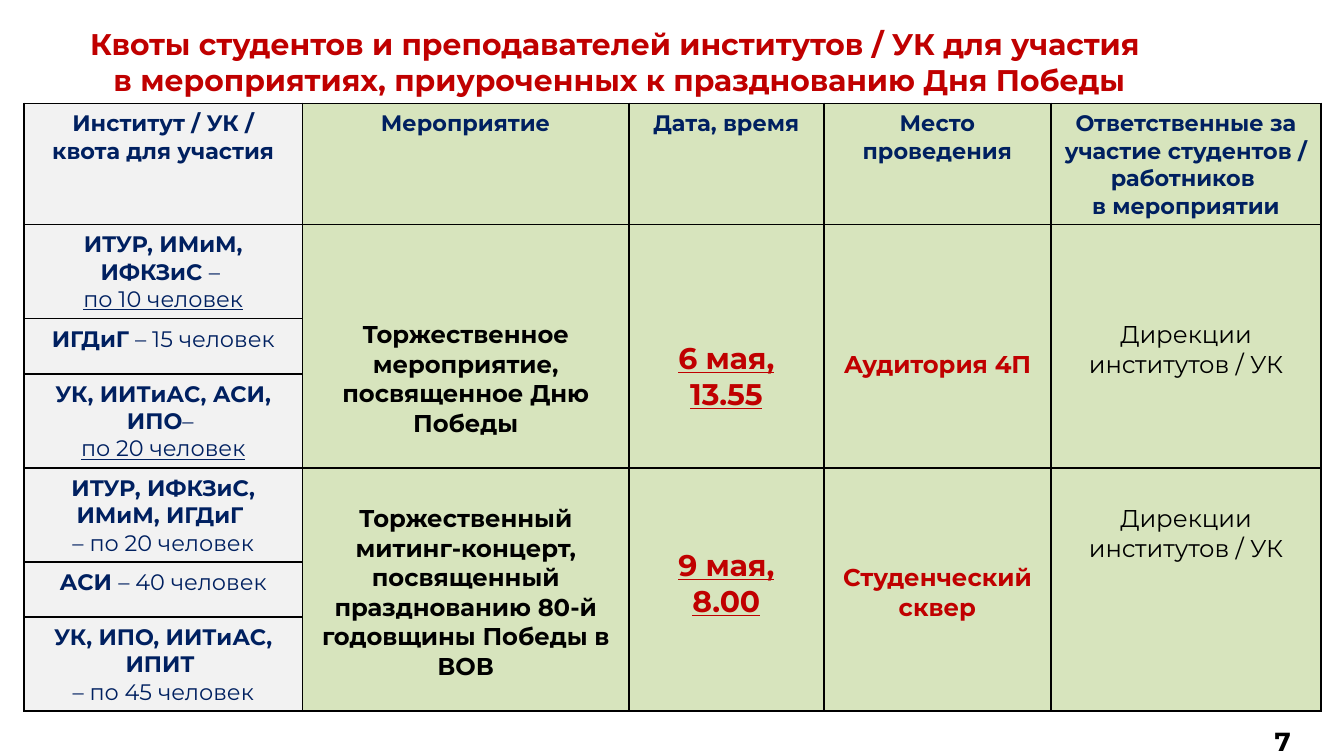
import pptx
import pptx.dml.color
import pptx.enum.text
import pptx.oxml
import pptx.oxml.ns
import pptx.util
from pptx.util import Inches

COLORS = {
    "red": "C00000",
    "navy": "002060",
    "black": "000000",
    "gray": "F2F2F2",
    "green": "D7E4BD",
}
LINE_HEIGHT = 1.22  # Montserrat line height relative to the text size


class SlideBuilder:
    font = "Montserrat"
    border_width = 1

    def __init__(self, presentation):
        self.slide = presentation.slides.add_slide(presentation.slide_layouts[6])

    def fill_text(self, text_frame, paragraphs, size, color):
        """Each paragraph is a list of (text, style); style holds b and u."""
        for index, runs in enumerate(paragraphs):
            paragraph = text_frame.paragraphs[0] if index == 0 else text_frame.add_paragraph()
            paragraph.alignment = pptx.enum.text.PP_ALIGN.CENTER
            for text, style in runs:
                run = paragraph.add_run()
                run.text = text
                run.font.name = self.font
                run.font.size = pptx.util.Pt(size)
                run.font.bold = "b" in style
                run.font.underline = "u" in style
                run.font.color.rgb = pptx.dml.color.RGBColor.from_string(COLORS[color])

    def text_box(self, left, top, width, height, paragraphs, size, color):
        shape = self.slide.shapes.add_textbox(
            Inches(left), Inches(top), Inches(width), Inches(height))
        shape.text_frame.word_wrap = True
        self.fill_text(shape.text_frame, paragraphs, size, color)

    def table(self, left, top, columns, rows):
        shape = self.slide.shapes.add_table(
            len(rows), len(columns), Inches(left), Inches(top),
            Inches(sum(columns)), Inches(sum(rows)))
        table = shape.table
        table.first_row = table.horz_banding = False
        for column, width in zip(table.columns, columns):
            column.width = Inches(width)
        for row, height in zip(table.rows, rows):
            row.height = Inches(height)
            for index, cell in enumerate(row.cells):
                self.cell_style(cell, "gray" if index == 0 else "green")
        return table

    def cell_style(self, cell, fill):
        properties = cell._tc.get_or_add_tcPr()
        for side in ("lnL", "lnR", "lnT", "lnB"):
            properties.append(pptx.oxml.parse_xml(
                f'<a:{side} {pptx.oxml.ns.nsdecls("a")} '
                f'w="{pptx.util.Pt(self.border_width)}"><a:solidFill>'
                f'<a:srgbClr val="{COLORS["black"]}"/></a:solidFill></a:{side}>'))
        cell.fill.solid()
        cell.fill.fore_color.rgb = pptx.dml.color.RGBColor.from_string(COLORS[fill])

    def cell_text(self, cell, paragraphs, size, color, lines_above=0):
        cell.margin_top = Inches(0.05) + pptx.util.Pt(lines_above * size * LINE_HEIGHT)
        self.fill_text(cell.text_frame, paragraphs, size, color)


HEADERS = [
    ["Институт / УК / квота для участия"],
    ["Мероприятие"],
    ["Дата, время"],
    ["Место проведения"],
    ["Ответственные за участие студентов / работников ", "в мероприятии"],
]
QUOTAS = [
    [[("ИТУР, ИМиМ, ИФКЗиС ", "b"), ("– ", "")], [("по 10 человек", "u")]],
    [[("ИГДиГ", "b"), (" – 15 человек", "")]],
    [[("УК, ИИТиАС, АСИ, ИПО", "b"), ("– ", "")], [("по 20 человек", "u")]],
    [[("ИТУР, ИФКЗиС, ИМиМ, ИГДиГ ", "b")], [("– по 20 человек", "")]],
    [[("АСИ ", "b"), ("– 40 человек", "")]],
    [[("УК, ИПО, ИИТиАС, ИПИТ ", "b")], [("– по 45 человек", "")]],
]
# Size, color and style of the event columns
EVENT_STYLES = [(13, "black", "b"), (16, "red", "bu"), (13, "red", "b"), (13, "black", "")]
# Text and number of lines left free above it
EVENTS = [
    [("Торжественное мероприятие, посвященное Дню Победы", 3),
     ("6 мая, 13.55", 3),
     ("Аудитория 4П", 4),
     ("Дирекции институтов / УК", 3)],
    [("Торжественный митинг-концерт, посвященный празднованию 80-й годовщины Победы в ВОВ", 1),
     ("9 мая, 8.00", 2),
     ("Студенческий сквер", 3),
     ("Дирекции институтов / УК", 1)],
]
ROWS_PER_EVENT = 3


def main():
    presentation = pptx.Presentation()
    presentation.slide_width = Inches(10)
    presentation.slide_height = Inches(10 * 9 / 16)
    builder = SlideBuilder(presentation)

    # Title and page number
    builder.text_box(0.12, 0.14, 8.98, 0.64, [
        [("Квоты студентов и преподавателей институтов / УК для участия ", "b")],
        [("в мероприятиях, приуроченных к празднованию Дня Победы", "b")],
    ], 16, "red")
    builder.text_box(9.09, 5.35, 0.91, 0.29, [[("7", "b")]], 14, "black")

    # Table header and quotas
    table = builder.table(0.18, 0.77, [2.07, 2.43, 1.45, 1.69, 2.01],
                          [0.9] + [0.7, 0.41, 0.7] * len(EVENTS))
    for column, lines in enumerate(HEADERS):
        builder.cell_text(table.cell(0, column), [[(line, "b")] for line in lines], 12, "navy")
    for row, paragraphs in enumerate(QUOTAS, start=1):
        builder.cell_text(table.cell(row, 0), paragraphs, 12, "navy")

    # Events, each merged over its quota rows
    for number, event in enumerate(EVENTS):
        first = 1 + number * ROWS_PER_EVENT
        for column, ((text, lines_above), (size, color, style)) in enumerate(
                zip(event, EVENT_STYLES), start=1):
            cell = table.cell(first, column)
            cell.merge(table.cell(first + ROWS_PER_EVENT - 1, column))
            builder.cell_text(cell, [[(text, style)]], size, color, lines_above)

    presentation.save("out.pptx")


if __name__ == "__main__":
    main()
